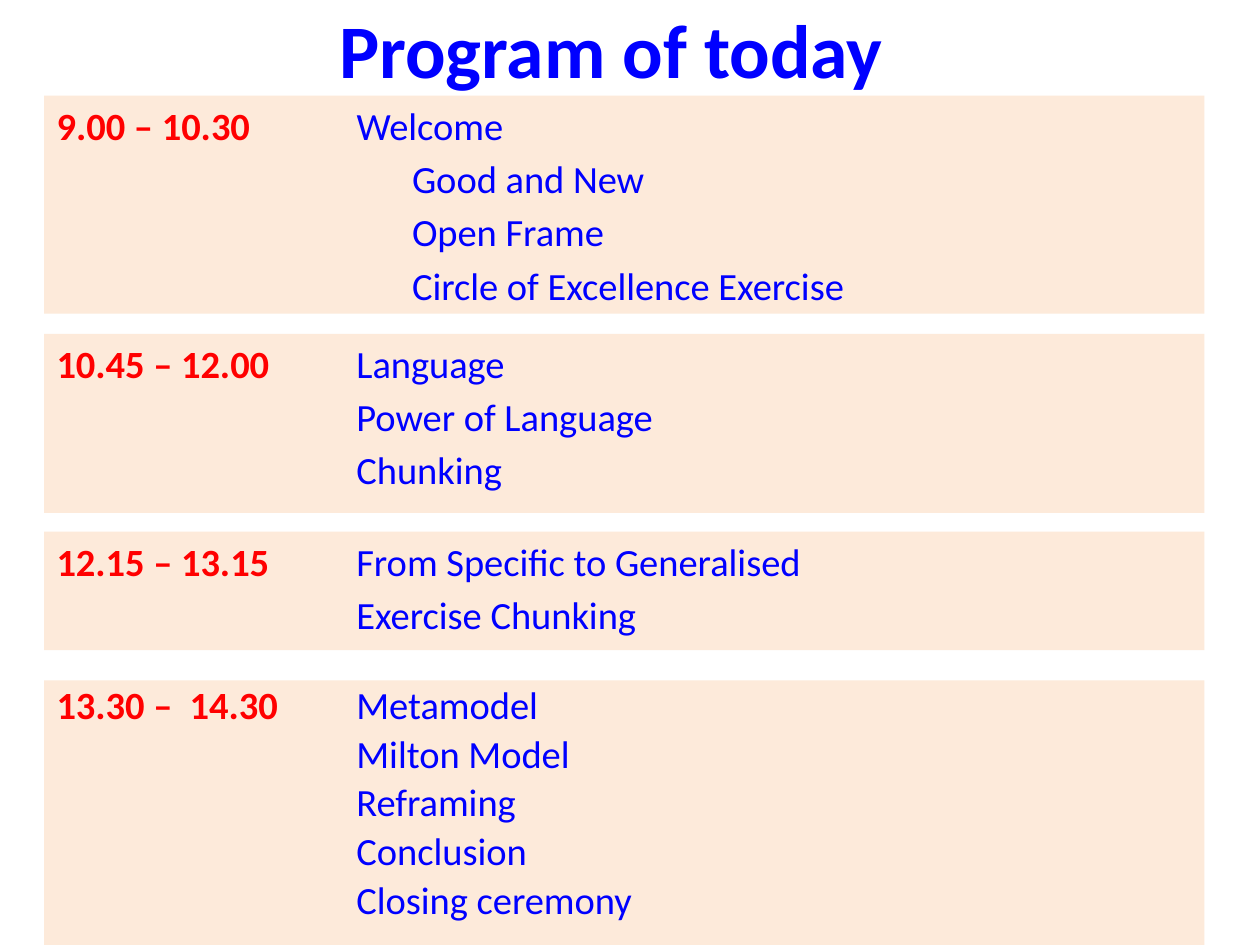
import pptx
import pptx.dml.color
import pptx.enum.text
import pptx.oxml
import pptx.oxml.ns
import pptx.util
from pptx.util import Inches

BLUE = pptx.dml.color.RGBColor(0x00, 0x00, 0xFF)
RED = pptx.dml.color.RGBColor(0xFF, 0x00, 0x00)
PEACH = pptx.dml.color.RGBColor(0xFD, 0xEA, 0xDA)
FONT = "Calibri"
LEFT, WIDTH = 0.35, 9.21
ACTIVITY_INDENT, DETAIL_INDENT = 2.38, 2.82

SESSIONS = [
    (0.76, 1.73, 1.0, "9.00 – 10.30", ["Welcome"],
     ["Good and New", "Open Frame", "Circle of Excellence Exercise"]),
    (2.65, 1.42, 1.0, "10.45 – 12.00",
     ["Language", "Power of Language", "Chunking"], []),
    (4.22, 0.94, 1.0, "12.15 – 13.15",
     ["From Specific to Generalised", "Exercise Chunking"], []),
    (5.4, 2.1, 0.9, "13.30 –  14.30",
     ["Metamodel", "Milton Model", "Reframing", "Conclusion", "Closing ceremony"], []),
]


def place(shape, left, top, width, height):
    """Move a shape to a box given in inches."""
    shape.left, shape.top = Inches(left), Inches(top)
    shape.width, shape.height = Inches(width), Inches(height)


def add_span(para, text, size, color, bold):
    """Append one formatted run to a paragraph."""
    span = para.add_run()
    span.text = text
    span.font.name = FONT
    span.font.size = pptx.util.Pt(size)
    span.font.bold = bold
    span.font.color.rgb = color


def set_indent(para, margin, first_line):
    """Set the left margin and first-line indent and switch bullets off."""
    properties = para._p.get_or_add_pPr()
    properties.set("marL", str(Inches(margin)))
    properties.set("indent", str(Inches(first_line)))
    properties.append(pptx.oxml.parse_xml(
        f"<a:buNone {pptx.oxml.ns.nsdecls('a')}/>"))


def fill_title(title, left, top, width, height):
    """Write the heading in the title placeholder."""
    place(title, left, top, width, height)
    frame = title.text_frame
    frame.auto_size = pptx.enum.text.MSO_AUTO_SIZE.NONE
    frame.vertical_anchor = pptx.enum.text.MSO_ANCHOR.MIDDLE
    para = frame.paragraphs[0]
    para.alignment = pptx.enum.text.PP_ALIGN.CENTER
    add_span(para, "Program of today", 43.2, BLUE, True)


def fill_session(box, line_spacing, time, activities, details):
    """Write a time and its list of activities on a tinted panel."""
    box.fill.solid()
    box.fill.fore_color.rgb = PEACH
    frame = box.text_frame
    frame.word_wrap = True
    frame.auto_size = pptx.enum.text.MSO_AUTO_SIZE.NONE
    frame.vertical_anchor = pptx.enum.text.MSO_ANCHOR.TOP
    lines = [(text, 0, ACTIVITY_INDENT) for text in activities]
    lines += [(text, 1, DETAIL_INDENT) for text in details]
    for index, (text, level, margin) in enumerate(lines):
        para = frame.add_paragraph() if index else frame.paragraphs[0]
        para.level = level
        para.line_spacing = line_spacing
        para.space_before = pptx.util.Pt(4)
        set_indent(para, margin, 0 if index else -margin)
        if index == 0:
            add_span(para, time + "\t", 22, RED, True)
        add_span(para, text, 22, BLUE, False)


def main():
    """Build the program slide."""
    deck = pptx.Presentation()
    deck.slide_width, deck.slide_height = Inches(10), Inches(7.5)
    page = deck.slides.add_slide(deck.slide_layouts[1])
    fill_title(page.shapes.title, LEFT, 0, 9, 0.76)
    for index, (top, height, line_spacing, *content) in enumerate(SESSIONS):
        if index == 0:
            box = page.placeholders[1]
        else:
            box = page.shapes.add_textbox(0, 0, 0, 0)
        place(box, LEFT, top, WIDTH, height)
        fill_session(box, line_spacing, *content)
    deck.save("out.pptx")


if __name__ == "__main__":
    main()
